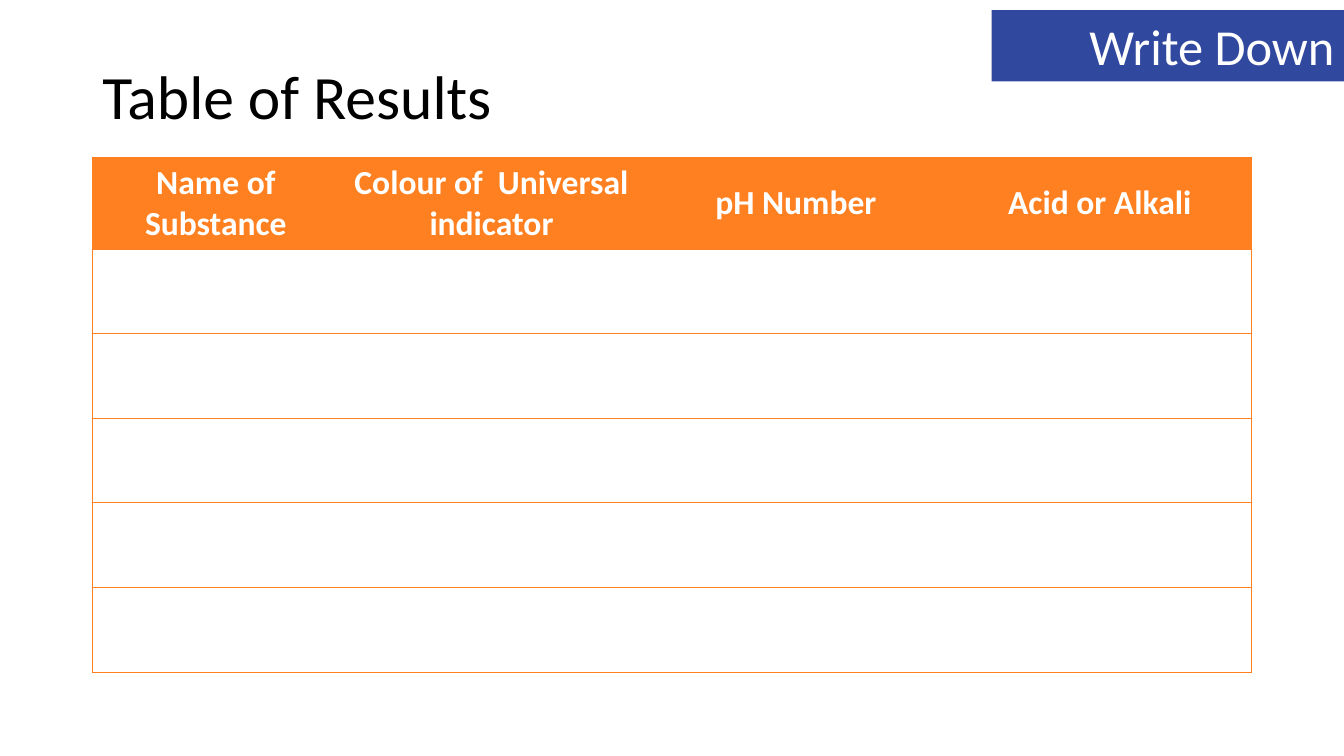
from lxml import etree
from pptx import Presentation
from pptx.dml.color import RGBColor
from pptx.enum import shapes, text
from pptx.oxml import ns
from pptx.util import Pt

FONT = "Calibri"
COLORS = {"orange": "FF8021", "blue": "31489F", "white": "FFFFFF", "black": "000000"}
HEADS = ["Name of Substance", "Colour of  Universal indicator", "pH Number", "Acid or Alkali"]
WIDTHS = [176.4, 217.4, 217.4, 216.8]
HEAD_H = 65.8
ROW_H = 60.4
BLANKS = 5


def color(name):
    return RGBColor.from_string(COLORS[name])


def write(frame, words, size, tint, align, bold=False):
    frame.text = words
    frame.word_wrap = True
    para = frame.paragraphs[0]
    para.alignment = align
    font = para.runs[0].font
    font.name = FONT
    font.size = Pt(size)
    font.bold = bold
    font.color.rgb = color(tint)
    return para


def add_title(slide, words):
    box = slide.shapes.add_textbox(Pt(66), Pt(19.2), Pt(828), Pt(104.4))
    para = write(box.text_frame, words, 44, "black", text.PP_ALIGN.LEFT)
    para.line_spacing = 0.9
    box.text_frame.vertical_anchor = text.MSO_ANCHOR.MIDDLE


def add_label(slide, words):
    box = slide.shapes.add_shape(shapes.MSO_SHAPE.RECTANGLE, Pt(708.4), Pt(7.2), Pt(252), Pt(51))
    box.shadow.inherit = False
    box.fill.solid()
    box.fill.fore_color.rgb = color("blue")
    box.line.fill.background()
    write(box.text_frame, words, 36, "white", text.PP_ALIGN.RIGHT)
    box.text_frame.vertical_anchor = text.MSO_ANCHOR.TOP


def add_edge(cell, side, shown):
    props = cell._tc.get_or_add_tcPr()
    line = etree.SubElement(props, ns.qn(f"a:ln{side}"), w=str(Pt(0.5)))
    if shown:
        fill = etree.SubElement(line, ns.qn("a:solidFill"))
        etree.SubElement(fill, ns.qn("a:srgbClr"), val=COLORS["orange"])
    else:
        etree.SubElement(line, ns.qn("a:noFill"))


def add_grid(slide):
    height = HEAD_H + BLANKS * ROW_H
    frame = slide.shapes.add_table(BLANKS + 1, len(HEADS), Pt(66), Pt(112.2), Pt(sum(WIDTHS)), Pt(height))
    table = frame.table
    table.horz_banding = False
    for col, width in zip(table.columns, WIDTHS):
        col.width = Pt(width)
    for i, row in enumerate(table.rows):
        row.height = Pt(ROW_H if i else HEAD_H)
        for j, cell in enumerate(row.cells):
            add_edge(cell, "L", j == 0)
            add_edge(cell, "R", j == len(HEADS) - 1)
            add_edge(cell, "T", True)
            add_edge(cell, "B", True)
            cell.fill.solid()
            cell.fill.fore_color.rgb = color("white" if i else "orange")
    for cell, words in zip(table.rows[0].cells, HEADS):
        cell.vertical_anchor = text.MSO_ANCHOR.MIDDLE
        write(cell.text_frame, words, 24, "white", text.PP_ALIGN.CENTER, True)


def main():
    deck = Presentation()
    deck.slide_width = Pt(960)
    deck.slide_height = Pt(540)
    slide = deck.slides.add_slide(deck.slide_layouts[6])
    add_title(slide, "Table of Results")
    add_grid(slide)
    add_label(slide, "Write Down")
    deck.save("out.pptx")


if __name__ == "__main__":
    main()
